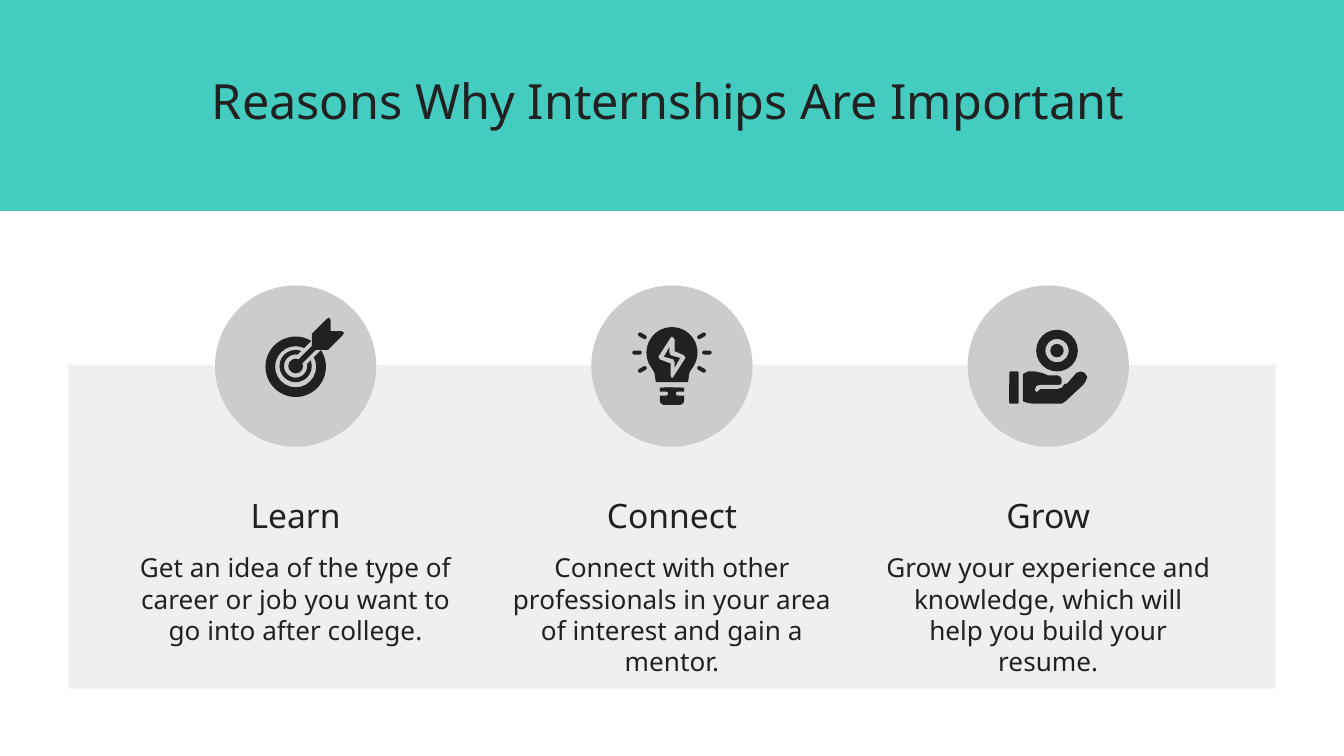
from lxml import etree
from pptx import Presentation
from pptx.dml.color import RGBColor
from pptx.enum.shapes import MSO_CONNECTOR, MSO_SHAPE
from pptx.enum.text import MSO_ANCHOR, MSO_AUTO_SIZE, PP_ALIGN
from pptx.oxml.ns import qn
from pptx.util import Inches, Pt

RECT = MSO_SHAPE.RECTANGLE
ROUND = MSO_SHAPE.ROUNDED_RECTANGLE
OVAL = MSO_SHAPE.OVAL
RING = MSO_SHAPE.DONUT
LINE = MSO_CONNECTOR.STRAIGHT
CENTER = PP_ALIGN.CENTER
TOP, BOTTOM = MSO_ANCHOR.TOP, MSO_ANCHOR.BOTTOM
FIXED = MSO_AUTO_SIZE.NONE

COLS, ROWS = 1000, 562.5
UNIT = Inches(0.01)
FONT = "Noto Sans"
TEAL, PANEL, DISC, INK = "44CCC0", "EFEFEF", "CCCCCC", "212121"


def color(code):
    return RGBColor.from_string(code)


class Deck:
    def __init__(self):
        self.file = Presentation()
        self.file.slide_width = COLS * UNIT
        self.file.slide_height = int(ROWS * UNIT)
        self.slide = self.file.slides.add_slide(self.file.slide_layouts[5])
        self.shapes = self.slide.shapes
        self.move(0, 0)

    def move(self, x, y):
        self.x, self.y = x, y

    def place(self, x, y):
        return int((self.x + x) * UNIT), int((self.y + y) * UNIT)

    def paint(self, shape, fill):
        shape.shadow.inherit = False
        shape.fill.solid()
        shape.fill.fore_color.rgb = color(fill)
        shape.line.fill.background()

    def box(self, kind, x, y, w, h, fill, adjust=None, turn=0):
        shape = self.shapes.add_shape(kind, *self.place(x, y), int(w * UNIT), int(h * UNIT))
        self.paint(shape, fill)
        shape.rotation = turn
        if adjust is not None:
            shape.adjustments[0] = adjust

    def disc(self, x, y, size, fill, kind=OVAL, adjust=None):
        self.box(kind, x - size / 2, y - size / 2, size, size, fill, adjust)

    def poly(self, points, fill):
        pen = self.shapes.build_freeform(*points[0], scale=UNIT)
        pen.add_line_segments(points[1:], close=True)
        self.paint(pen.convert_to_shape(*self.place(0, 0)), fill)

    def line(self, start, end, width, fill):
        link = self.shapes.add_connector(LINE, *self.place(*start), *self.place(*end))
        link.line.color.rgb = color(fill)
        link.line.width = Pt(width)
        etree.SubElement(link._element.spPr, qn("a:effectLst"))

    def style(self, shape, words, size, anchor):
        frame = shape.text_frame
        frame.word_wrap = True
        frame.auto_size = FIXED
        frame.vertical_anchor = anchor
        frame.margin_left = frame.margin_right = 10 * UNIT
        frame.margin_top = frame.margin_bottom = 10 * UNIT
        frame.text = words
        para = frame.paragraphs[0]
        para.alignment = CENTER
        para.line_spacing = 1.0
        para.font.name = FONT
        para.font.size = Pt(size)
        para.font.color.rgb = color(INK)

    def title(self, words, x, y, w, h):
        shape = self.shapes.title
        shape.left, shape.top = self.place(x, y)
        shape.width, shape.height = w * UNIT, h * UNIT
        self.style(shape, words, 26, TOP)
        shape.element.getparent().append(shape.element)

    def text(self, words, x, y, w, h, size, anchor=TOP):
        shape = self.shapes.add_textbox(*self.place(x, y), w * UNIT, h * UNIT)
        self.style(shape, words, size, anchor)


def target(deck):
    deck.disc(0, 0.5, 45, INK, RING, 0.16)
    deck.disc(0, 0, 24, INK, RING, 0.14)
    deck.line((4, -4), (18, -18), 7, DISC)
    deck.disc(0, 0, 11, INK)
    deck.line((0, 0), (16, -16), 3, INK)
    deck.poly([(12, -24), (23, -35), (25, -36), (26, -34), (26, -26), (34, -26),
               (36, -25), (35, -23), (25, -13), (24, -12), (12, -12)], INK)


def bulb(deck):
    deck.disc(0, -10, 38, INK)
    deck.poly([(-18, -4), (-13, 5), (-12, 12), (12, 12), (13, 5), (18, -4)], INK)
    deck.poly([(0, -22), (2, -20), (2, -11), (9, -8), (10, -6),
               (1, 8), (0, 9), (-1, 7), (-1, -2), (-9, -5), (-10, -7), (-1, -21)], DISC)
    deck.poly([(-2, -14), (-6, -7), (1, -5), (2, -3), (2, 1),
               (6, -6), (-1, -8), (-2, -10)], INK)
    deck.box(ROUND, -9, 16, 18, 13, INK, 0.25)
    deck.box(RECT, -9, 16, 18, 3, INK)
    for side in (-1, 1):
        deck.box(ROUND, side * 6.5 - 3.5, 19, 7, 3, DISC, 0.5)
        for slant in (-1, 0, 1):
            x = side * (26 - 4 * abs(slant))
            deck.box(ROUND, x - 3.5, slant * 12.5 - 11.5, 7, 3, INK, 0.5, 30 * side * slant)


def hand(deck):
    deck.disc(6.5, -11.5, 31, INK, RING, 0.22)
    deck.disc(6.5, -11.5, 10, INK)
    deck.box(ROUND, -29, 4, 7, 24, INK, 0.15)
    deck.poly([(-19, 6), (-15, 4), (-10, 4), (-5, 5), (0, 7), (7, 7), (9, 8),
               (10, 10), (10, 12), (9, 14), (14, 13), (21, 5), (24, 4), (27, 5),
               (29, 8), (28, 11), (26, 14), (13, 26), (10, 28), (7, 28),
               (-12, 28), (-17, 27), (-19, 26)], INK)
    deck.poly([(-10, 18), (-9, 15), (-6, 14), (8, 14), (12, 13), (10, 16),
               (7, 17), (-6, 17), (-8, 19), (-9, 19)], DISC)


def main():
    deck = Deck()
    deck.box(RECT, 51, 271.5, 898, 241, PANEL)
    deck.box(RECT, -9, -7, 1016, 164, TEAL)
    deck.title("Reasons Why Internships Are Important", 119, 43, 757, 49)
    reasons = [
        (target, "Learn",
         "Get an idea of the type of career or job you want to go into after college."),
        (bulb, "Connect",
         "Connect with other professionals in your area of interest and gain a mentor."),
        (hand, "Grow",
         "Grow your experience and knowledge, which will help you build your resume."),
    ]
    for col, (icon, head, body) in enumerate(reasons):
        deck.move(220 + 280 * col, 272.4)
        deck.disc(0, 0, 120, DISC)
        icon(deck)
        deck.text(head, -131.5, 87, 263, 49, 18, BOTTOM)
        deck.text(body, -131.5, 128, 263, 68, 14)
    deck.file.save("out.pptx")


if __name__ == "__main__":
    main()
